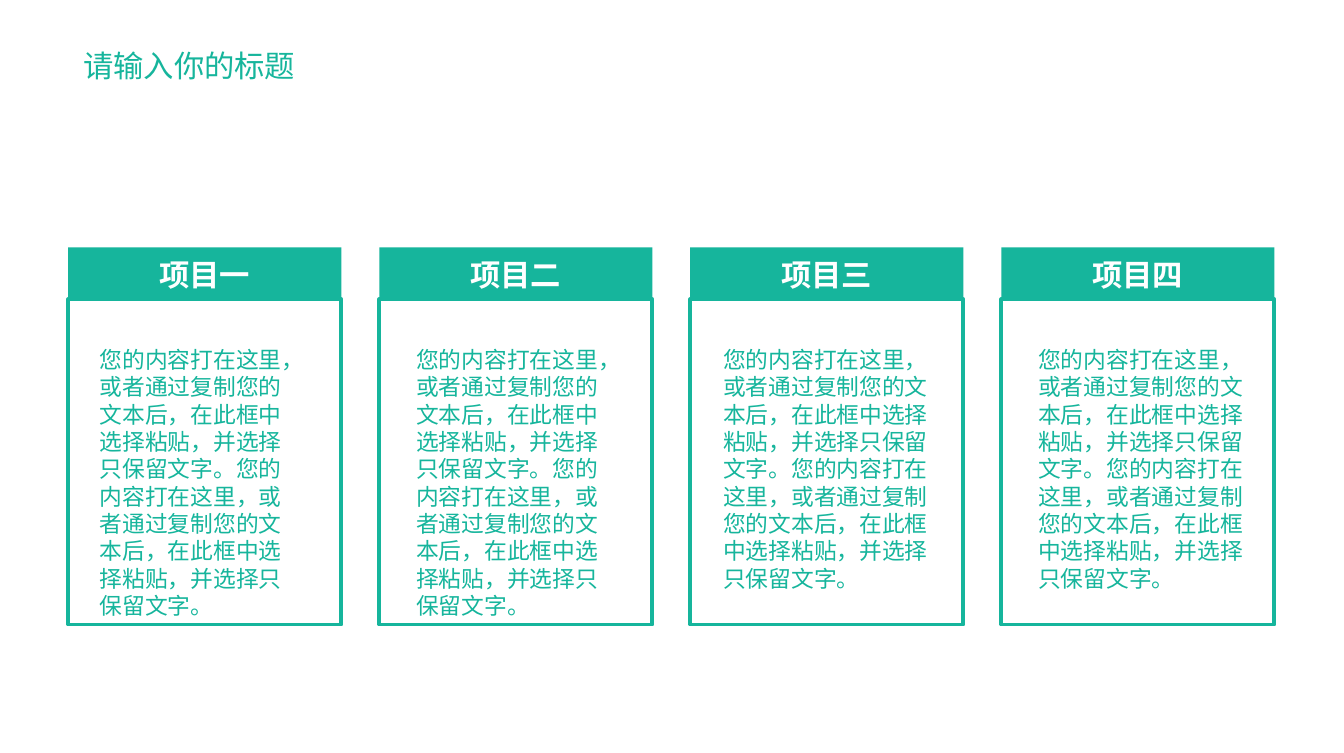
"""Build a slide with four titled text cards in a row."""
import pptx
import pptx.util
import pptx.dml.color
import pptx.enum.shapes
import pptx.enum.text
import pptx.oxml.ns
import lxml.etree

TITLE = "请输入你的标题"
SENTENCE = "您的内容打在这里，或者通过复制您的文本后，在此框中选择粘贴，并选择只保留文字。"
CARDS = [
    {"heading": "项目一", "indent": 0.16, "width": 1.63, "height": 2.09},
    {"heading": "项目二", "indent": 0.2, "width": 1.63, "height": 2.09},
    {"heading": "项目三", "indent": 0.17, "width": 1.71, "height": 1.89},
    {"heading": "项目四", "indent": 0.2, "width": 1.66, "height": 1.89},
]
FONT, GREEN, WHITE = "Noto Sans CJK SC", "16B59C", "FFFFFF"
SLIDE_W, SLIDE_H = 9.84, 5.51
LEFT, PITCH, CARD_W = 0.5, 2.277, 2
BAR_TOP, BAR_H = 1.81, 0.39
FRAME_TOP, FRAME_H = 2.19, 2.38
BODY_TOP = 2.49
RECT = pptx.enum.shapes.MSO_SHAPE.RECTANGLE
ALIGN = pptx.enum.text.PP_ALIGN
ANCHOR = pptx.enum.text.MSO_ANCHOR


def rgb(value):
    return pptx.dml.color.RGBColor.from_string(value)


def inches(*values):
    return [pptx.util.Inches(v) for v in values]


def write(sp, text, size, color, align, anchor, inset, bold=False):
    tf = sp.text_frame
    tf.word_wrap = True
    tf.auto_size = pptx.enum.text.MSO_AUTO_SIZE.NONE
    tf.vertical_anchor = anchor
    tf.margin_left, tf.margin_top, tf.margin_right, tf.margin_bottom = inches(*inset * 2)
    p = tf.paragraphs[0]
    p.text, p.alignment = text, align
    font = p.font
    font.name, font.size, font.bold = FONT, pptx.util.Pt(size), bold
    font.color.rgb = rgb(color)
    latin = p._p.find(".//" + pptx.oxml.ns.qn("a:latin"))
    ea = lxml.etree.Element(pptx.oxml.ns.qn("a:ea"), typeface=FONT)
    latin.addnext(ea)
    return p


def add_rect(slide, *box):
    sp = slide.shapes.add_shape(RECT, *inches(*box))
    sp.shadow.inherit = False
    return sp


def add_card(slide, left, card):
    bar = add_rect(slide, left, BAR_TOP, CARD_W, BAR_H)
    bar.fill.solid()
    bar.fill.fore_color.rgb = rgb(GREEN)
    bar.line.fill.background()
    write(bar, card["heading"], 16, WHITE, ALIGN.CENTER, ANCHOR.MIDDLE, (0.07, 0.04), True)

    frame = add_rect(slide, left, FRAME_TOP, CARD_W, FRAME_H)
    frame.fill.background()
    frame.line.color.rgb = rgb(GREEN)
    frame.line.width = pptx.util.Pt(2)

    body = slide.shapes.add_textbox(
        *inches(left + card["indent"], BODY_TOP, card["width"], card["height"]))
    write(body, SENTENCE * 2, 12, GREEN, ALIGN.LEFT, ANCHOR.TOP, (0.07, 0.04))


def main():
    prs = pptx.Presentation()
    prs.slide_width, prs.slide_height = inches(SLIDE_W, SLIDE_H)
    slide = prs.slides.add_slide(prs.slide_layouts[5])
    title = slide.shapes.title
    title.left, title.top, title.width, title.height = inches(0.51, 0.16, 2.12, 0.5)
    p = write(title, TITLE, 16, GREEN, ALIGN.LEFT, ANCHOR.TOP, (0.1, 0.05))
    p.line_spacing = 1.5
    for i, card in enumerate(CARDS):
        add_card(slide, LEFT + i * PITCH, card)
    prs.save("out.pptx")


if __name__ == "__main__":
    main()
